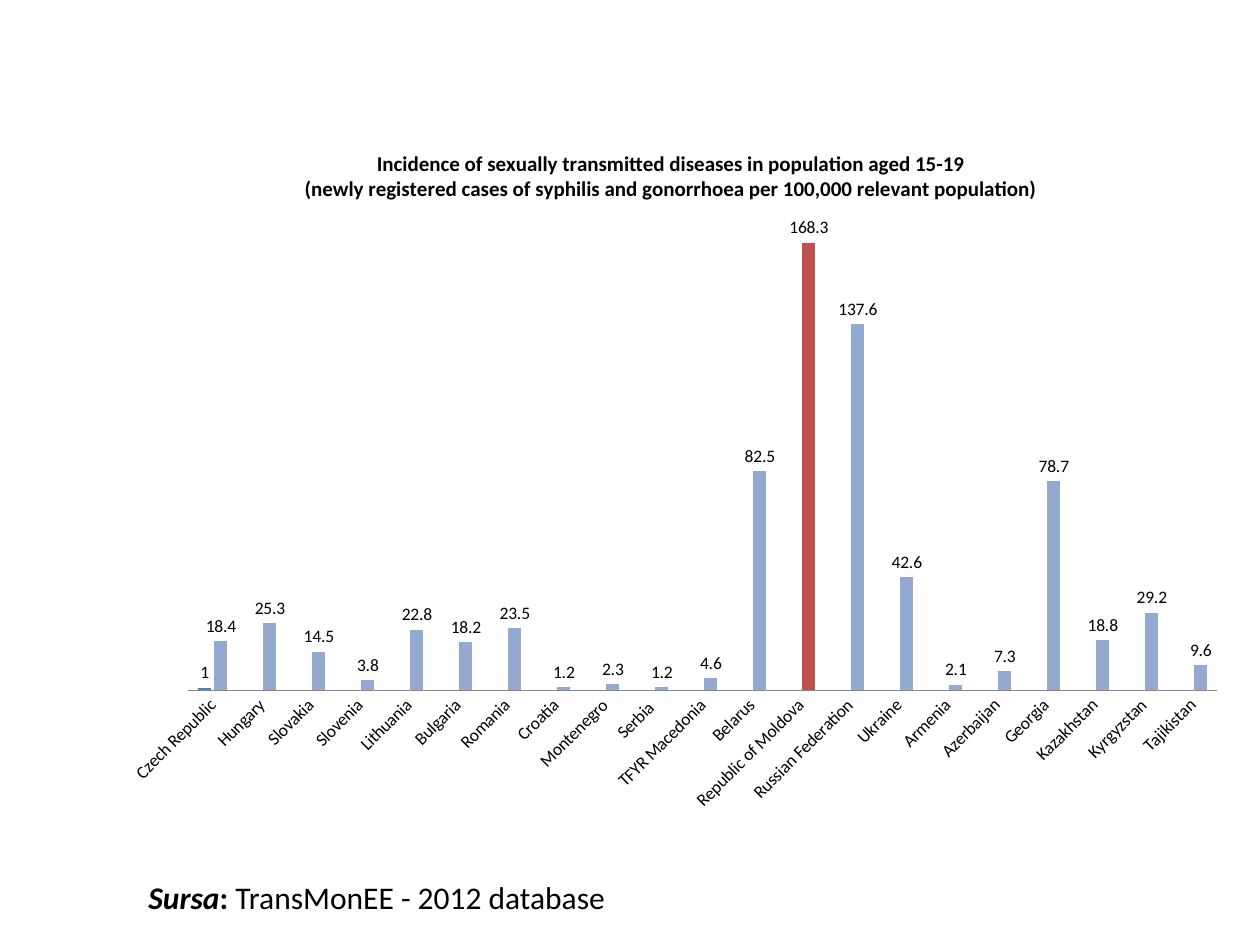
from pptx import Presentation
from pptx.chart.data import CategoryChartData
from pptx.dml.color import RGBColor
from pptx.enum.chart import XL_CHART_TYPE, XL_LABEL_POSITION, XL_TICK_MARK
from pptx.oxml import parse_xml
from pptx.oxml.ns import nsdecls, qn
from pptx.util import Cm, Pt

# Content
TITLE = [
    "Incidence of sexually transmitted diseases in population aged 15-19",
    "(newly registered cases of syphilis and gonorrhoea per 100,000 relevant population)",
]
INCIDENCE = [
    ("Czech Republic", 18.4), ("Hungary", 25.3), ("Slovakia", 14.5),
    ("Slovenia", 3.8), ("Lithuania", 22.8), ("Bulgaria", 18.2),
    ("Romania", 23.5), ("Croatia", 1.2), ("Montenegro", 2.3),
    ("Serbia ", 1.2), ("TFYR Macedonia", 4.6), ("Belarus", 82.5),
    ("Republic of Moldova", 168.3), ("Russian Federation", 137.6),
    ("Ukraine", 42.6), ("Armenia", 2.1), ("Azerbaijan", 7.3),
    ("Georgia", 78.7), ("Kazakhstan", 18.8), ("Kyrgyzstan", 29.2),
    ("Tajikistan", 9.6),
]
FIRST_SERIES = [1] + [None] * (len(INCIDENCE) - 1)
HIGHLIGHT = "Republic of Moldova"
# Text, bold, italic
SOURCE = [
    ("Sursa", True, True),
    (": ", True, False),
    ("TransMonEE\u00a0- 2012 database", False, False),
]

THEME = {
    "font": "Calibri",
    "text": RGBColor(0, 0, 0),
    "axis": RGBColor(0x86, 0x86, 0x86),
    "first": RGBColor(0x4F, 0x81, 0xBD),
    "bars": RGBColor(0x93, 0xA9, 0xCF),
    "highlight": RGBColor(0xC0, 0x50, 0x4D),
    "label_size": Pt(10),
    "title_size": Pt(12),
    "source_size": Pt(18),
}


def style_font(font, size):
    font.name = THEME["font"]
    font.size = size
    font.color.rgb = THEME["text"]


def place(parent, index, inner=False, **fractions):
    """Give a chart part a manual layout in fractions of the chart."""
    for old in parent.findall(qn("c:layout")):
        parent.remove(old)
    target = '<c:layoutTarget val="inner"/>' if inner else ""
    modes = "".join(f'<c:{k}Mode val="edge"/>' for k in "xy")
    sizes = "".join(f'<c:{k} val="{v}"/>' for k, v in fractions.items())
    parent.insert(index, parse_xml(
        f"<c:layout {nsdecls('c')}><c:manualLayout>{target}{modes}{sizes}"
        "</c:manualLayout></c:layout>"))


def add_incidence_chart(slide):
    countries = [country for country, _ in INCIDENCE]
    data = CategoryChartData()
    data.categories = countries
    data.add_series("Series 1", FIRST_SERIES)
    data.add_series("Series 2", [rate for _, rate in INCIDENCE])
    chart = slide.shapes.add_chart(
        XL_CHART_TYPE.COLUMN_CLUSTERED,
        Cm(2.54), Cm(2.34), Cm(22.02), Cm(15.04), data).chart
    chart.has_legend = False
    style_font(chart.font, THEME["label_size"])

    # Title
    heading = chart.chart_title.text_frame
    heading.text = "\n".join(TITLE)
    for line in heading.paragraphs:
        style_font(line.font, THEME["title_size"])
        line.font.bold = True
    place(chart.chart_title._element, 1, x=0.16, y=0.04)

    # Axes
    rates = chart.value_axis
    rates.minimum_scale, rates.maximum_scale = 0, 180
    rates.has_major_gridlines = False
    rates.visible = False
    names = chart.category_axis
    names.major_tick_mark = names.minor_tick_mark = XL_TICK_MARK.NONE
    names.format.line.color.rgb = THEME["axis"]
    style_font(names.tick_labels.font, THEME["label_size"])
    names._element.find(qn("c:txPr")).find(qn("a:bodyPr")).set("rot", "-2700000")

    # Bars and their labels
    plot = chart.plots[0]
    plot.gap_width, plot.overlap = 150, -25
    plot.vary_by_categories = False
    looks = [(THEME["first"], "General"), (THEME["bars"], "0.0")]
    for series, (color, number_format) in zip(plot.series, looks):
        series.invert_if_negative = False
        series.format.fill.solid()
        series.format.fill.fore_color.rgb = color
        labels = series.data_labels
        labels.show_value = True
        labels.position = XL_LABEL_POSITION.OUTSIDE_END
        labels.number_format = number_format
        labels.number_format_is_linked = False
        style_font(labels.font, THEME["label_size"])
    highlight = plot.series[1].points[countries.index(HIGHLIGHT)].format.fill
    highlight.solid()
    highlight.fore_color.rgb = THEME["highlight"]

    plot_area = chart._chartSpace.find(qn("c:chart")).find(qn("c:plotArea"))
    place(plot_area, 0, inner=True, x=0.057, y=0.128, w=0.942, h=0.642)


def add_source(slide):
    frame = slide.shapes.add_textbox(
        Cm(2.74), Cm(17.58), Cm(20.12), Cm(1.02)).text_frame
    frame.word_wrap = True
    line = frame.paragraphs[0]
    style_font(line.font, THEME["source_size"])
    for text, bold, italic in SOURCE:
        run = line.add_run()
        run.text = text
        run.font.bold, run.font.italic = bold, italic


def main():
    deck = Presentation()
    deck.slide_width, deck.slide_height = Cm(25.4), Cm(19.05)
    slide = deck.slides.add_slide(deck.slide_layouts[6])
    add_incidence_chart(slide)
    add_source(slide)
    deck.save("out.pptx")


if __name__ == "__main__":
    main()
